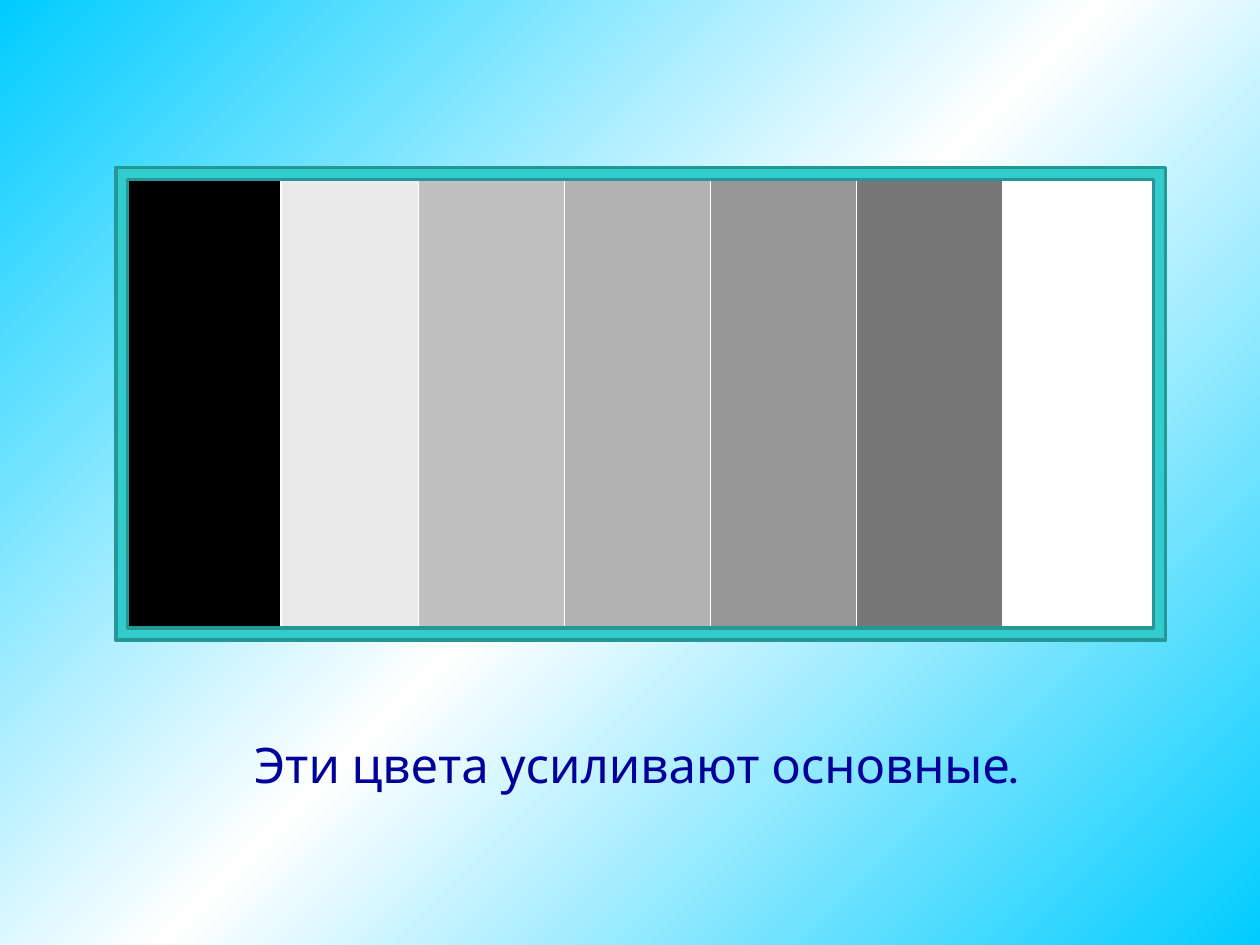
from copy import deepcopy

from pptx import Presentation
from pptx.dml.color import RGBColor
from pptx.enum.shapes import MSO_SHAPE
from pptx.util import Inches, Pt

RECT, FRAME = MSO_SHAPE.RECTANGLE, MSO_SHAPE.FRAME

CAPTION = "Эти цвета усиливают основные."
# Bar colour by position, left to right
BARS = ["000000", "EAEAEA", "C0C0C0", "B2B2B2", "969696", "777777", "FFFFFF"]
# Back to front: the black bar overlaps its neighbour
ORDER = [1, 2, 3, 4, 5, 0, 6]
SKY = [(0, "00CCFF"), (0.5, "FFFFFF"), (1, "00CCFF")]

LEFT, TOP, PITCH = 1.0, 1.42, 1.16
WIDTH, HEIGHT = 1.23, 3.58


def rgb(code):
    return RGBColor.from_string(code)


def paint_sky(slide):
    """Fill the background with a diagonal three-stop gradient."""
    fill = slide.background.fill
    fill.gradient()
    fill.gradient_angle = 315
    stops = slide.element.xpath(".//p:bg//a:gsLst")[0]
    stops.append(deepcopy(stops[-1]))
    for stop, (place, code) in zip(fill.gradient_stops, SKY):
        stop.position = place
        stop.color.rgb = rgb(code)


def add_box(slide, kind, place, fill, line, width):
    box = slide.shapes.add_shape(kind, *map(Inches, place))
    box.shadow.inherit = False
    box.fill.solid()
    box.fill.fore_color.rgb = rgb(fill)
    box.line.color.rgb = rgb(line)
    box.line.width = Pt(width)
    return box


def add_caption(slide):
    box = slide.shapes.add_textbox(Inches(1.92), Inches(5.83), Inches(6.42), Inches(0.58))
    box.text_frame.word_wrap = True
    para = box.text_frame.paragraphs[0]
    para.text = CAPTION
    para.line_spacing = 0.9
    para.space_before = Pt(5.6)
    para.font.name = "Karla"
    para.font.size = Pt(28)
    para.font.color.rgb = rgb("010199")


def main():
    deck = Presentation()
    deck.slide_width, deck.slide_height = Inches(10), Inches(7.5)
    slide = deck.slides.add_slide(deck.slide_layouts[6])
    paint_sky(slide)
    for col in ORDER:
        place = (LEFT + col * PITCH, TOP, WIDTH, HEIGHT)
        add_box(slide, RECT, place, BARS[col], "FFFFFF", 0.75)
    add_caption(slide)
    frame = add_box(slide, FRAME, (0.92, 1.33, 8.33, 3.75), "33CCCC", "269797", 2)
    frame.adjustments[0] = 0.025
    deck.save("out.pptx")


if __name__ == "__main__":
    main()
